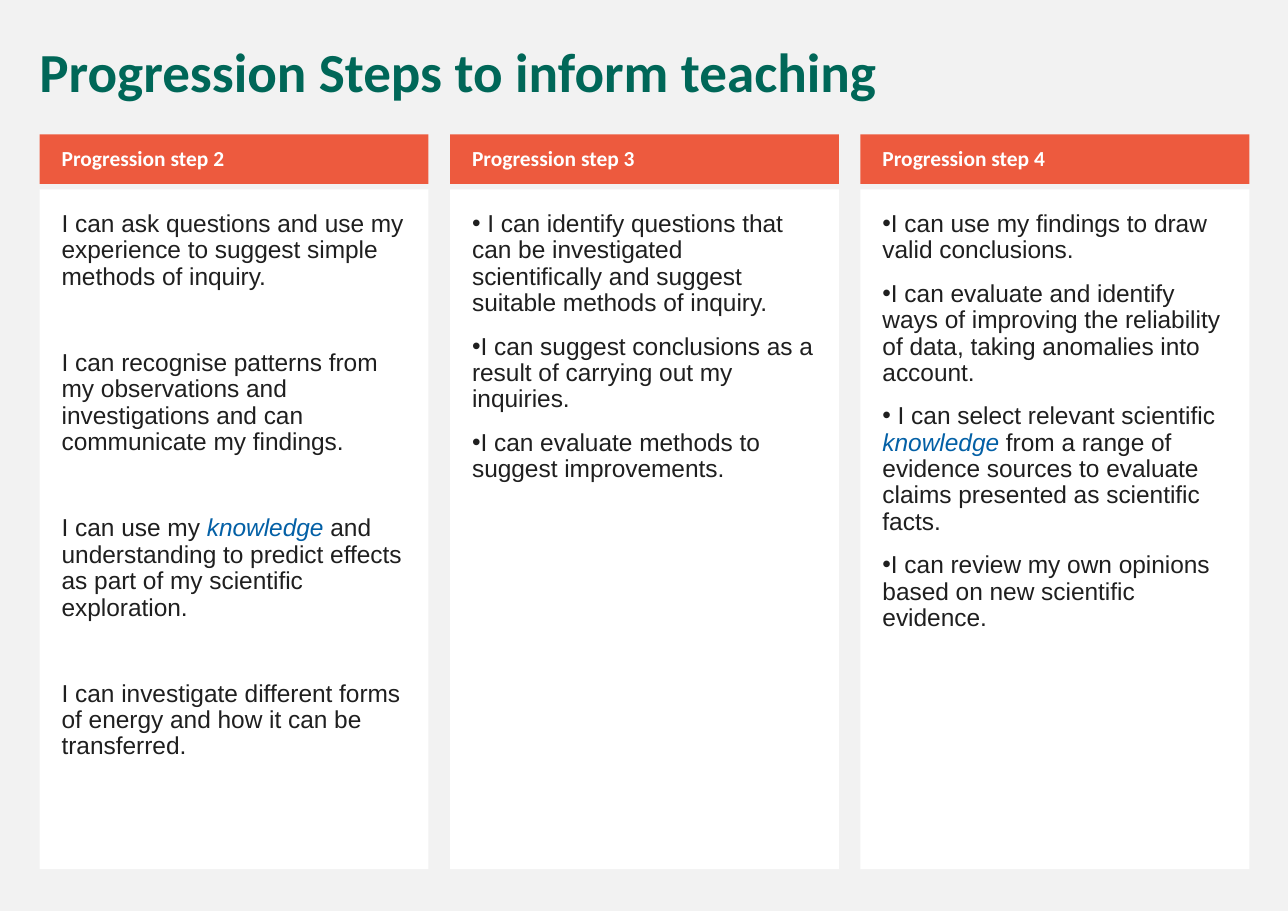
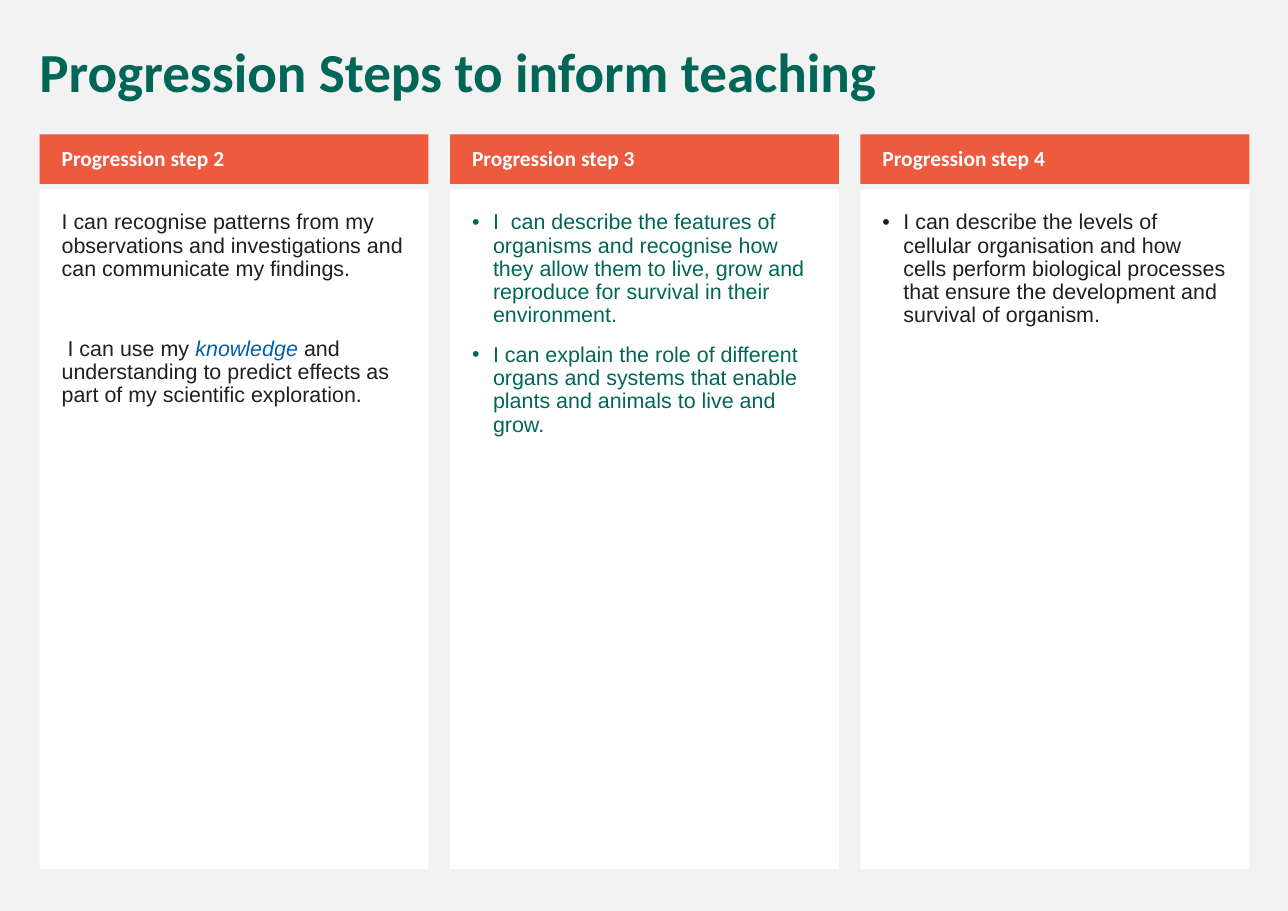
import dataclasses

import lxml.etree
import pptx
import pptx.dml.color
import pptx.enum.shapes
import pptx.enum.text
import pptx.oxml.ns
import pptx.util

Inches, Pt = pptx.util.Inches, pptx.util.Pt
Anchor = pptx.enum.text.MSO_ANCHOR


# Colours, fonts and sizes
@dataclasses.dataclass(frozen=True)
class Theme:
    back: str = "F2F2F2"
    card: str = "FFFFFF"
    band: str = "ED5A3E"
    ink: str = "1F1F1F"
    green: str = "006758"
    blue: str = "0360A6"
    white: str = "FFFFFF"
    head: str = "Calibri"
    body: str = "Arial"
    title: int = 36
    label: int = 14
    space: int = 11
    line: float = 0.9


theme = Theme()
rgb = pptx.dml.color.RGBColor.from_string


def block(slide, area, inset, fill=None, anchor=Anchor.TOP):
    """Add a rectangle, or a bare text box, and return its text frame."""
    area = [Inches(v) for v in area]
    if fill:
        shape = slide.shapes.add_shape(pptx.enum.shapes.MSO_SHAPE.RECTANGLE, *area)
        shape.shadow.inherit = False
        shape.fill.solid()
        shape.fill.fore_color.rgb = rgb(fill)
        shape.line.fill.background()
    else:
        shape = slide.shapes.add_textbox(*area)
    frame = shape.text_frame
    sides = ("margin_left", "margin_top", "margin_right", "margin_bottom")
    form = dict(zip(sides, map(Inches, inset)), word_wrap=True, vertical_anchor=anchor)
    for name, value in form.items():
        setattr(frame, name, value)
    return frame


def write(frame, texts, font, size, color, bold=False, gap=theme.space, hang=None):
    """Fill a frame; *starred* words are blue italics, hang sets bullets."""
    for i, text in enumerate(texts):
        para = frame.add_paragraph() if i else frame.paragraphs[0]
        form = {"alignment": pptx.enum.text.PP_ALIGN.LEFT,
                "line_spacing": theme.line,
                "space_before": Pt(gap if i else theme.space)}
        for name, value in form.items():
            setattr(para, name, value)
        if hang is not None:
            props = para._p.get_or_add_pPr()
            props.set("marL", str(Inches(hang)))
            props.set("indent", str(-Inches(hang)))
            for tag, key, value in (("a:buFont", "typeface", theme.body),
                                    ("a:buChar", "char", "•")):
                lxml.etree.SubElement(props, pptx.oxml.ns.qn(tag)).set(key, value)
        for j, part in enumerate(text.split("*")):
            run = para.add_run()
            run.text = part
            term = j % 2 == 1
            form = {"name": font, "size": Pt(size), "bold": bold, "italic": term}
            for name, value in form.items():
                setattr(run.font, name, value)
            run.font.color.rgb = rgb(theme.blue if term else color)


# Column grid
left, right, width = 0.36, 11.34, 3.53
steps = (2, 3, 4)
pitch = (right - left - width) / (len(steps) - 1)

# Content: one dict of text and format for each column
pages = [
    {"size": 16, "columns": [
        {"gap": 39, "texts": [
            "I can ask questions and use my experience to suggest simple methods of inquiry.",
            "I can recognise patterns from my observations and investigations and can communicate my findings.",
            "I can use my *knowledge* and understanding to predict effects as part of my scientific exploration.",
            "I can investigate different forms of energy and how it can be transferred."]},
        {"hang": 0, "texts": [
            " I can identify questions that can be investigated scientifically and suggest suitable methods of inquiry.",
            "I can suggest conclusions as a result of carrying out my inquiries.",
            "I can evaluate methods to suggest improvements."]},
        {"hang": 0, "texts": [
            "I can use my findings to draw valid conclusions.",
            "I can evaluate and identify ways of improving the reliability of data, taking anomalies into account.",
            " I can select relevant scientific *knowledge* from a range of evidence sources to evaluate claims presented as scientific facts.",
            "I can review my own opinions based on new scientific evidence."]}]},
    {"size": 14, "columns": [
        {"gap": 37, "texts": [
            "I can recognise patterns from my observations and investigations and can communicate my findings.",
            " I can use my *knowledge* and understanding to predict effects as part of my scientific exploration."]},
        {"hang": 0.19, "color": theme.green, "texts": [
            "I  can describe the features of organisms and recognise how they allow them to live, grow and reproduce for survival in their environment.",
            "I can explain the role of different organs and systems that enable plants and animals to live and grow."]},
        {"hang": 0.19, "texts": [
            "I can describe the levels of cellular organisation and how cells perform biological processes that ensure the development and survival of organism."]}]},
]

# Deck and shared background
deck = pptx.Presentation()
deck.slide_width, deck.slide_height = Inches(11.69), Inches(8.27)
fill = deck.slide_master.background.fill
fill.solid()
fill.fore_color.rgb = rgb(theme.back)

for page in pages:
    slide = deck.slides.add_slide(deck.slide_layouts[6])

    # Title
    frame = block(slide, (0.26, 0.36, 11.08, 0.65), (0.1, 0.05, 0.1, 0.05))
    write(frame, ["Progression Steps to inform teaching"],
          theme.head, theme.title, theme.green, bold=True)

    # Header band and card of each step
    for i, (step, column) in enumerate(zip(steps, page["columns"])):
        x = left + i * pitch
        frame = block(slide, (x, 1.22, width, 0.45), (0.2, 0.05, 0.1, 0.05),
                      theme.band, Anchor.MIDDLE)
        write(frame, [f"Progression step {step}"],
              theme.head, theme.label, theme.white, bold=True)
        frame = block(slide, (x, 1.72, width, 6.17), (0.2,) * 4, theme.card)
        write(frame, **{"font": theme.body, "size": page["size"],
                        "color": theme.ink, **column})

deck.save("out.pptx")
